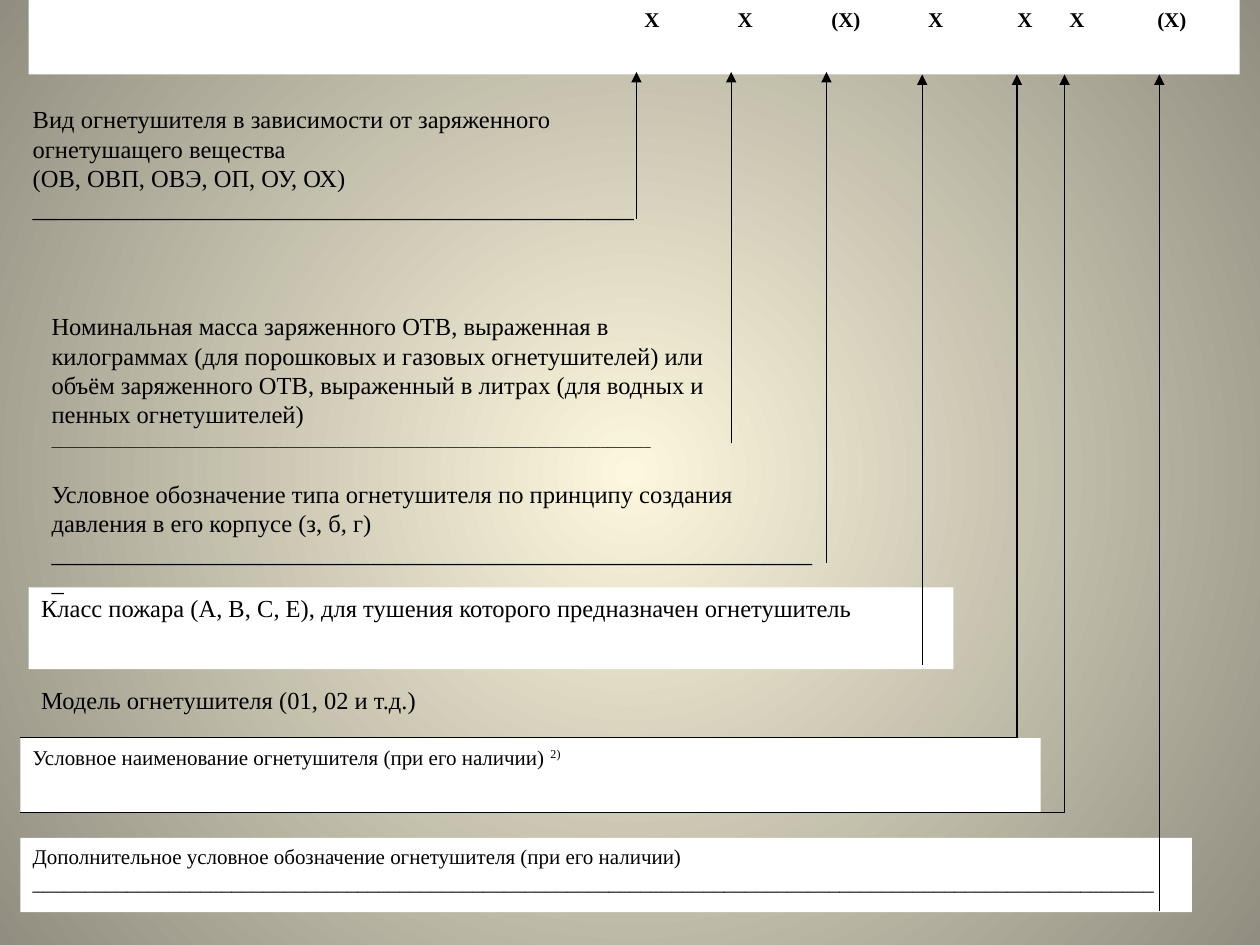
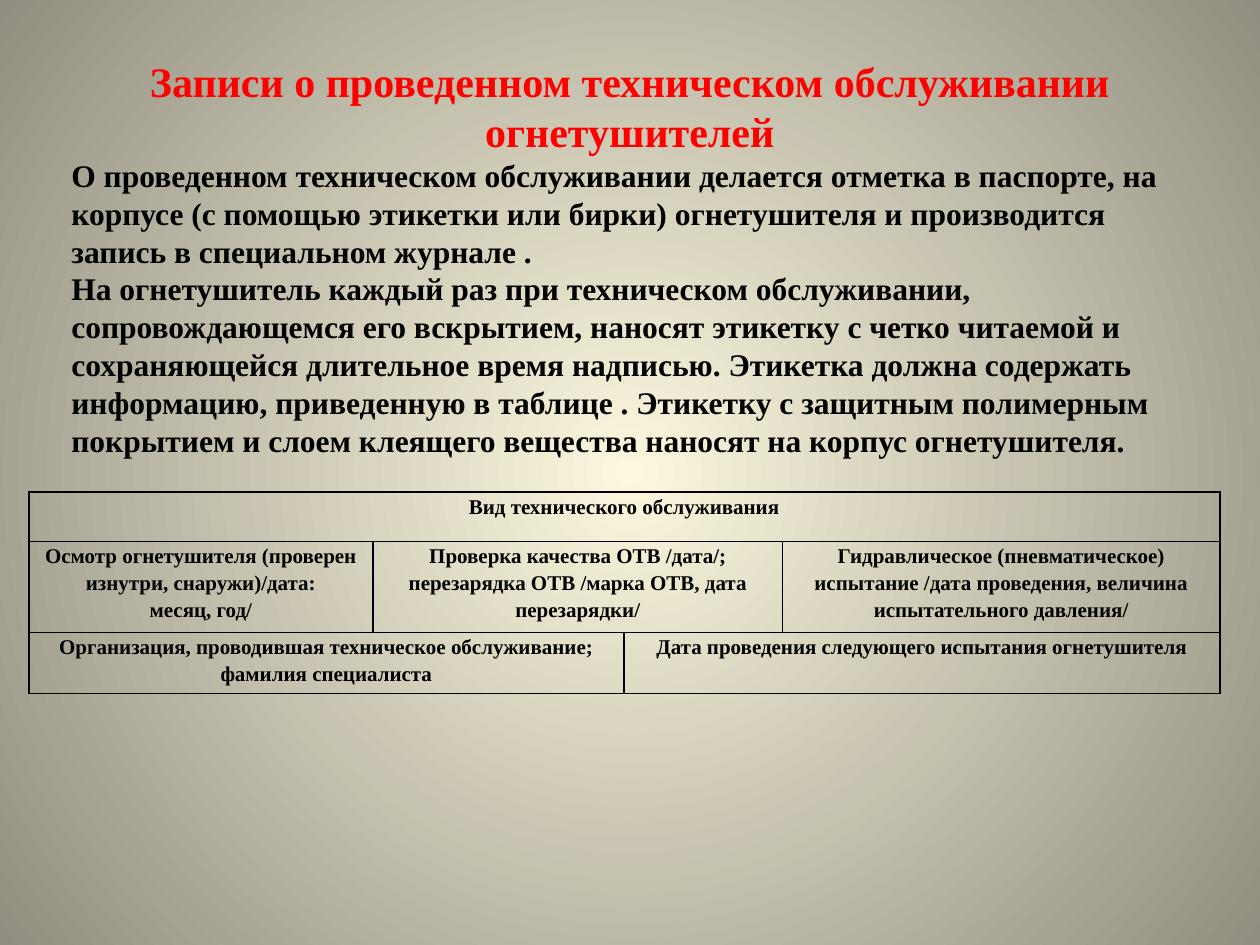
from lxml.etree import SubElement
from pptx import Presentation
from pptx.dml.color import RGBColor
from pptx.enum.shapes import MSO_CONNECTOR as Line, MSO_SHAPE as Shape
from pptx.enum.text import MSO_ANCHOR as Anchor, PP_ALIGN as Align
from pptx.oxml import parse_xml
from pptx.oxml.ns import nsdecls, qn
from pptx.util import Cm, Pt

FONT = "Times New Roman"
BLACK, WHITE, RED = "000000", "FFFFFF", "FF0000"
GLOW, EDGE = "FCF7DD", "918E81"

# Slide 1: marks of the designation and where each one starts in its band
MARKS = [("X", 12.16), ("X", 14.04), ("(X)", 15.93), ("X", 17.88),
         ("X", 19.68), ("X", 20.73), ("(X)", 22.5)]
MARK_BAND = (0.58, 0, 24.41, 1.5)

# White bands: left, top, width, height, size, paragraphs
BANDS = [
    (0.58, 11.84, 18.64, 1.65, 14,
     ["Класс пожара (А, В, С, Е), для тушения которого предназначен огнетушитель"]),
    (0.41, 14.88, 20.57, 1.5, 12,
     ["Условное наименование огнетушителя (при его наличии) 2)"]),
    (0.41, 16.89, 23.62, 1.5, 12,
     ["Дополнительное условное обозначение огнетушителя (при его наличии)", "_" * 107]),
]
# Plain captions in the same form
CAPTIONS = [
    (0.41, 1.98, 13.28, 3.25, 14,
     ["Вид огнетушителя в зависимости от заряженного огнетушащего вещества",
      "(ОВ, ОВП, ОВЭ, ОП, ОУ, ОХ)", "_" * 49]),
    (0.79, 6.15, 14.27, 3.25, 14,
     ["Номинальная масса заряженного ОТВ, выраженная в\vкилограммах (для порошковых и "
      "газовых огнетушителей) или объём заряженного ОТВ, выраженный в литрах (для водных "
      "и пенных огнетушителей)", "_" * 84]),
    (0.79, 9.53, 16.08, 2.06, 14,
     ["Условное обозначение типа огнетушителя по принципу создания давления "
      "в его корпусе (з, б, г)", "_" * 63]),
    (0.58, 13.69, 12.9, 0.86, 14, ["Модель огнетушителя (01, 02 и т.д.)"]),
]
# Arrows: x, bottom, tip
ARROWS = [(12.83, 4.42, 1.45), (14.74, 8.94, 1.45), (16.66, 11.35, 1.45),
          (18.59, 13.41, 1.5), (20.5, 14.88, 1.5), (21.46, 16.38, 1.5),
          (23.37, 18.36, 1.5)]
# Rules: left, right, y
RULES = [(0.41, 20.5, 14.86), (0.41, 21.46, 16.38)]

# Slide 2
RECORDS = [
    ("Записи о проведенном техническом обслуживании огнетушителей", 24, RED, Align.CENTER),
    ("О проведенном техническом обслуживании делается отметка в паспорте, на корпусе "
     "(с помощью этикетки или бирки) огнетушителя и производится запись в специальном "
     "журнале .", 18, BLACK, Align.LEFT),
    ("На огнетушитель каждый раз при техническом обслуживании, сопровождающемся его "
     "вскрытием, наносят этикетку с четко читаемой и сохраняющейся длительное время "
     "надписью. Этикетка должна содержать информацию, приведенную в таблице . Этикетку "
     "с защитным полимерным покрытием и слоем клеящего вещества наносят на корпус "
     "огнетушителя.", 18, BLACK, Align.LEFT),
]
LABEL_COLUMNS = [6.94, 5.06, 3.2, 8.81]
# Rows of the label: height, then (text, columns spanned)
LABEL_ROWS = [
    (1.0, [("Вид технического обслуживания", 4)]),
    (1.83, [("Осмотр огнетушителя (проверен\vизнутри, снаружи)/дата:\vмесяц, год/", 1),
            ("Проверка качества ОТВ /дата/;\vперезарядка ОТВ /марка ОТВ, дата\vперезарядки/", 2),
            ("Гидравлическое (пневматическое) испытание /дата проведения, величина "
             "испытательного давления/", 1)]),
    (1.23, [("Организация, проводившая техническое обслуживание; фамилия специалиста", 2),
            ("Дата проведения следующего испытания огнетушителя", 2)]),
]


def rgb(color):
    return RGBColor.from_string(color)


def cms(*lengths):
    return [Cm(length) for length in lengths]


def style(paragraph, size, color=BLACK, bold=False, align=Align.LEFT):
    paragraph.alignment = align
    for run in paragraph.runs:
        run.font.name, run.font.size, run.font.bold = FONT, Pt(size), bold
        run.font.color.rgb = rgb(color)


def superscript(run):
    run.font._element.set("baseline", "30000")


def add_band(slide, box):
    band = slide.shapes.add_shape(Shape.RECTANGLE, *cms(*box))
    band.shadow.inherit = False
    band.fill.solid()
    band.fill.fore_color.rgb = rgb(WHITE)
    band.line.fill.background()
    return band.text_frame


def add_caption(slide, box):
    return slide.shapes.add_textbox(*cms(*box)).text_frame


def write(frame, texts, size):
    frame.word_wrap = True
    frame.vertical_anchor = Anchor.TOP
    frame.text = "\n".join(texts)
    for paragraph in frame.paragraphs:
        style(paragraph, size)


def add_line(slide, x1, y1, x2, y2, arrow=False):
    line = slide.shapes.add_connector(Line.STRAIGHT, *cms(x1, y1, x2, y2))
    line.line.color.rgb = rgb(BLACK)
    line.line.width = Pt(0.75)
    properties = line._element.spPr
    if arrow:
        SubElement(properties.find(qn("a:ln")), qn("a:tailEnd"), type="triangle")
    SubElement(properties, qn("a:effectLst"))


def set_background(master):
    fill = master.background.fill
    fill.gradient()
    for stop, color in zip(fill.gradient_stops, (GLOW, EDGE)):
        stop.color.rgb = rgb(color)
    linear = master.element.find(".//" + qn("p:bg")).find(".//" + qn("a:lin"))
    linear.getparent().replace(linear, parse_xml(
        f'<a:path {nsdecls("a")} path="circle">'
        '<a:fillToRect l="50000" t="50000" r="50000" b="50000"/></a:path>'))


def set_borders(cell):
    properties = cell._tc.get_or_add_tcPr()
    for position, side in enumerate("LRTB"):
        properties.insert(position, parse_xml(
            f'<a:ln{side} {nsdecls("a")} w="12700"><a:solidFill>'
            f'<a:srgbClr val="{BLACK}"/></a:solidFill></a:ln{side}>'))


def build_designation(slide):
    # Marks stand on tab stops
    frame = add_band(slide, MARK_BAND)
    write(frame, ["".join("\t" + mark for mark, _ in MARKS)], 12)
    marks = frame.paragraphs[0]
    style(marks, 12, bold=True)
    stops = SubElement(marks._p.get_or_add_pPr(), qn("a:tabLst"))
    for _, start in MARKS:
        SubElement(stops, qn("a:tab"), pos=str(Cm(start)), algn="l")

    # Bands, then lines over them, then captions
    for *box, size, texts in BANDS:
        write(add_band(slide, box), texts, size)
    name = slide.shapes[2].text_frame.paragraphs[0]
    name.runs[0].text = name.text.removesuffix("2)")
    note = name.add_run()
    note.text = "2)"
    style(name, 12)
    superscript(note)

    for x, bottom, tip in ARROWS:
        add_line(slide, x, bottom, x, tip, arrow=True)
    for left, right, y in RULES:
        add_line(slide, left, y, right, y)

    captions = []
    for *box, size, texts in CAPTIONS:
        captions.append(add_caption(slide, box))
        write(captions[-1], texts, size)
    superscript(captions[1].paragraphs[-1].runs[0])


def build_records(slide):
    # Label table
    label = slide.shapes.add_table(
        len(LABEL_ROWS), len(LABEL_COLUMNS),
        *cms(0.58, 9.92, sum(LABEL_COLUMNS), sum(height for height, _ in LABEL_ROWS))).table
    label.first_row = label.horz_banding = False
    for column, width in zip(label.columns, LABEL_COLUMNS):
        column.width = Cm(width)
    for r, (height, entries) in enumerate(LABEL_ROWS):
        label.rows[r].height = Cm(height)
        c = 0
        for text, span in entries:
            cell = label.cell(r, c)
            if span > 1:
                cell.merge(label.cell(r, c + span - 1))
            paragraph = cell.text_frame.paragraphs[0]
            paragraph.text = text
            paragraph.line_spacing = 1.15
            style(paragraph, 12, bold=True, align=Align.CENTER)
            c += span
    for cell in label.iter_cells():
        cell.margin_left = cell.margin_right = Cm(0.05)
        cell.margin_top = cell.margin_bottom = 0
        cell.fill.background()
        set_borders(cell)

    # Heading and explanation
    frame = add_caption(slide, (1.19, 0.99, 23.01, 9.07))
    write(frame, [text for text, *_ in RECORDS], 18)
    for paragraph, (_, size, color, align) in zip(frame.paragraphs, RECORDS):
        style(paragraph, size, color, True, align)


def main():
    deck = Presentation()
    deck.slide_width, deck.slide_height = cms(25.4, 19.05)
    set_background(deck.slide_master)
    for build in (build_designation, build_records):
        build(deck.slides.add_slide(deck.slide_layouts[6]))
    deck.save("out.pptx")


if __name__ == "__main__":
    main()
